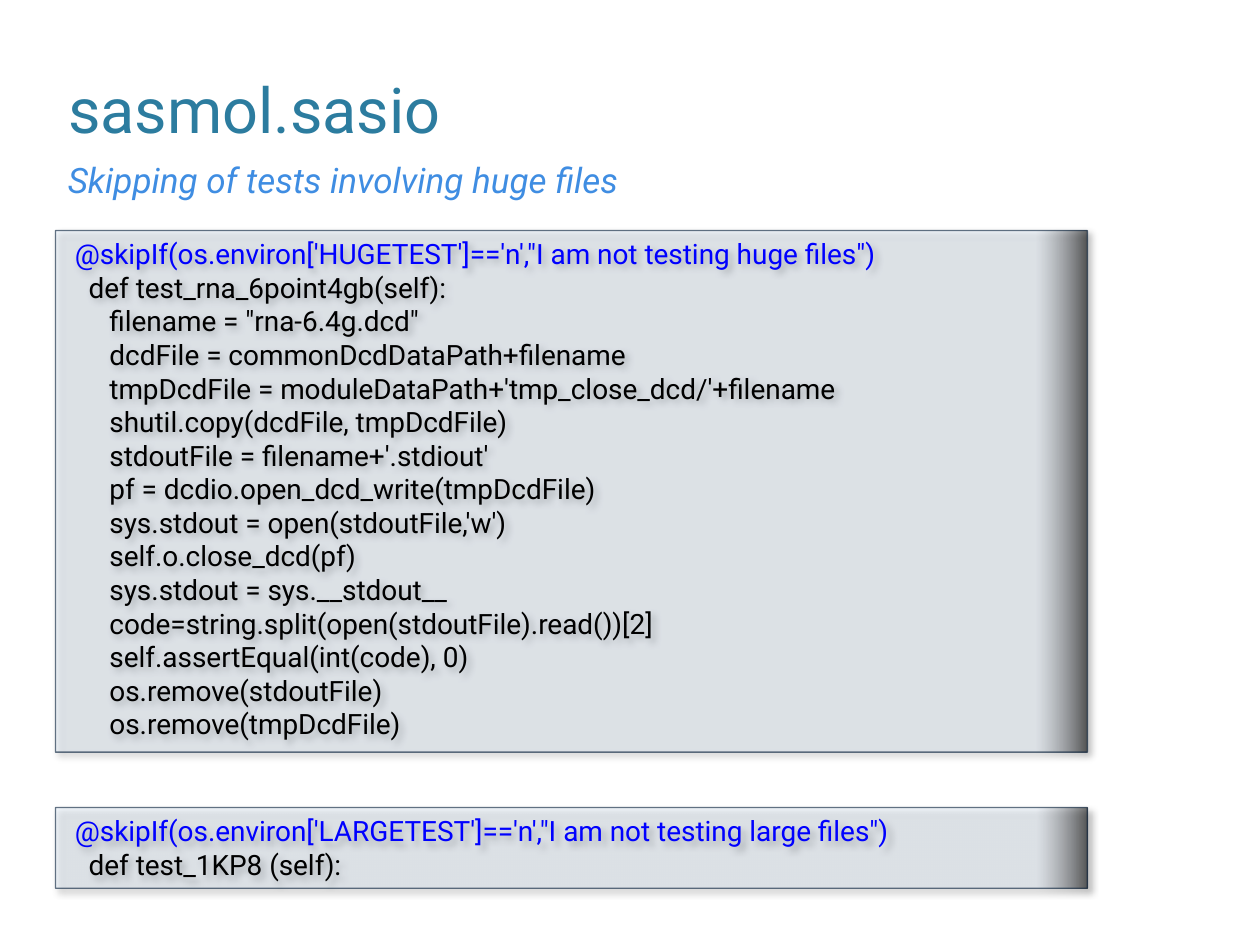
"""Build the slide on skipping tests that involve huge files."""
from dataclasses import dataclass

from lxml.etree import SubElement
from pptx import Presentation
from pptx.dml.color import RGBColor
from pptx.enum.shapes import MSO_SHAPE
from pptx.enum.text import MSO_ANCHOR, MSO_AUTO_SIZE, PP_ALIGN
from pptx.oxml.ns import qn
from pptx.util import Inches, Pt

FONT = "Roboto"
TEAL = RGBColor(0x2C, 0x7C, 0x9F)
SKY = RGBColor(0x3F, 0x8D, 0xE2)
PALE = RGBColor(0xD9, 0xE8, 0xF9)
NAVY = RGBColor(0x09, 0x21, 0x3B)
BLUE = RGBColor(0x00, 0x00, 0xFF)
BLACK = RGBColor(0x00, 0x00, 0x00)
LEFT = Inches(0.44)
SPACE = 0.055


@dataclass
class CodeBox:
    top: float
    height: float
    decorator: str
    signature: str
    body: tuple[str, ...] = ()


BOXES = (
    CodeBox(
        1.83, 4.14,
        "@skipIf(os.environ['HUGETEST']=='n',\"I am not testing huge files\")",
        "def test_rna_6point4gb(self):",
        (
            'filename = "rna-6.4g.dcd"',
            "dcdFile = commonDcdDataPath+filename",
            "tmpDcdFile = moduleDataPath+'tmp_close_dcd/'+filename",
            "shutil.copy(dcdFile, tmpDcdFile)",
            "stdoutFile = filename+'.stdiout'",
            "pf = dcdio.open_dcd_write(tmpDcdFile)",
            "sys.stdout = open(stdoutFile,'w')",
            "self.o.close_dcd(pf)",
            "sys.stdout = sys.__stdout__",
            "code=string.split(open(stdoutFile).read())[2]",
            "self.assertEqual(int(code), 0)",
            "os.remove(stdoutFile)",
            "os.remove(tmpDcdFile)",
        ),
    ),
    CodeBox(
        6.41, 0.64,
        "@skipIf(os.environ['LARGETEST']=='n',\"I am not testing large files\")",
        "def test_1KP8 (self):",
    ),
)


def add_run(p, text: str, size: float, color: RGBColor, italic: bool = False) -> None:
    p.alignment = PP_ALIGN.LEFT
    r = p.add_run()
    r.text = text
    r.font.name, r.font.size, r.font.italic = FONT, Pt(size), italic
    r.font.color.rgb = color


def set_opacity(clr, percent: int) -> None:
    SubElement(clr, qn("a:alpha"), val=str(percent * 1000))


def add_shadow(sp) -> None:
    sp.shadow.inherit = False
    effects = sp._element.spPr.find(qn("a:effectLst"))
    shadow = SubElement(effects, qn("a:outerShdw"), blurRad=str(Pt(4)), dist=str(Pt(3)),
                        dir=str(45 * 60000), algn="tl", rotWithShape="0")
    set_opacity(SubElement(shadow, qn("a:srgbClr"), val=str(BLACK)), 43)


def style_box(sp) -> None:
    sp.fill.gradient()
    sp.fill.gradient_angle = 0
    for stop, (position, color) in zip(sp.fill.gradient_stops, ((0.95, PALE), (1, BLACK))):
        stop.position, stop.color.rgb = position, color
    sp.line.color.rgb, sp.line.width = NAVY, Pt(0.75)
    for clr, opacity in zip(sp._element.spPr.iter(qn("a:srgbClr")), (30, 57, 62)):
        for effect in list(clr):
            clr.remove(effect)
        set_opacity(clr, opacity)
    add_shadow(sp)


def add_code_box(s, box: CodeBox) -> None:
    sp = s.shapes.add_shape(MSO_SHAPE.RECTANGLE, LEFT, Inches(box.top),
                            Inches(8.19), Inches(box.height))
    style_box(sp)
    tf = sp.text_frame
    tf.word_wrap, tf.vertical_anchor = True, MSO_ANCHOR.TOP
    lines = [(box.decorator, 1, BLUE), (box.signature, 3, BLACK)]
    lines += [(text, 6, BLACK) for text in box.body]
    for i, (text, spaces, color) in enumerate(lines):
        p = tf.add_paragraph() if i else tf.paragraphs[0]
        add_run(p, text, 16, color)
        p._p.get_or_add_pPr().set("marL", str(Inches(spaces * SPACE)))


def main() -> None:
    prs = Presentation()
    prs.slide_width, prs.slide_height = Inches(10), Inches(7.5)
    s = prs.slides.add_slide(prs.slide_layouts[5])

    title = s.shapes.title
    title.left, title.top = LEFT, Inches(0.33)
    title.width, title.height = Inches(8.8), Inches(0.88)
    tf = title.text_frame
    tf.vertical_anchor, tf.auto_size = MSO_ANCHOR.BOTTOM, MSO_AUTO_SIZE.NONE
    add_run(tf.paragraphs[0], "sasmol.sasio", 36, TEAL)

    tf = s.shapes.add_textbox(LEFT, Inches(1.21), Inches(7.57), Inches(0.44)).text_frame
    tf.word_wrap = True
    add_run(tf.paragraphs[0], "Skipping of tests involving huge files", 20, SKY, italic=True)

    for box in BOXES:
        add_code_box(s, box)
    prs.save("out.pptx")


if __name__ == "__main__":
    main()
